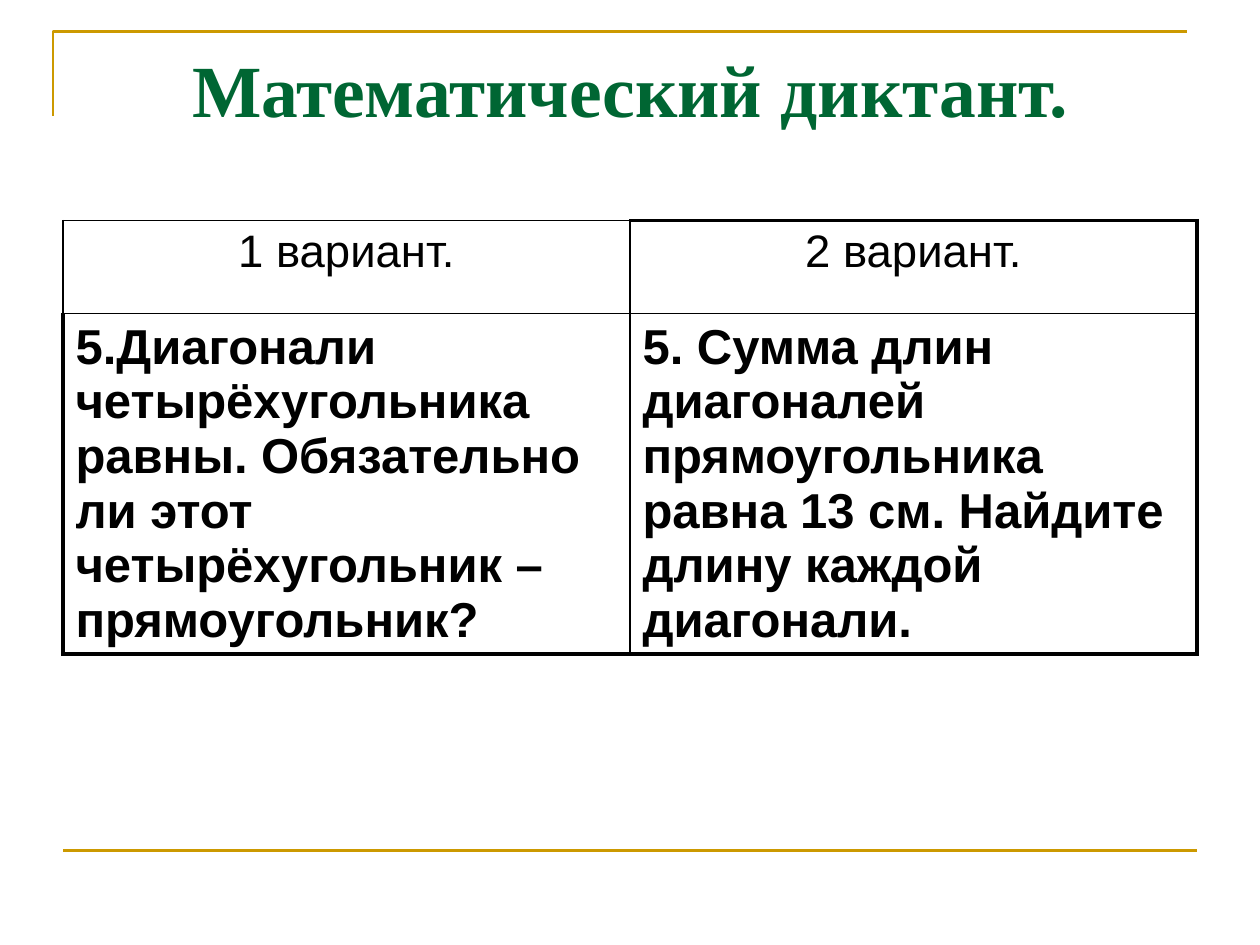
"""Build the "Математический диктант" slide with a two-variant question table."""
from lxml import etree
from pptx import Presentation, util as u
from pptx.dml.color import RGBColor
from pptx.enum import shapes, text
from pptx.oxml.ns import qn

COLORS = {"gold": "CC9900", "green": "006633", "black": "000000", "white": "FFFFFF"}
THIN, THICK = 1, 2.25
ROWS = [
    ["1 вариант.", "2 вариант."],
    ["5.Диагонали четырёхугольника равны. Обязательно ли этот четырёхугольник – прямоугольник?",
     "5. Сумма длин диагоналей прямоугольника равна 13 см. Найдите длину каждой диагонали."],
]
BORDERS = [
    [(THIN, THIN, THIN, THIN), (THIN, THICK, THICK, THIN)],
    [(THICK, THIN, THIN, THICK), (THIN, THIN, THICK, THICK)],
]


def style_font(font, name, size, color, bold):
    font.name, font.size, font.bold = name, u.Pt(size), bold
    font.color.rgb = RGBColor.from_string(COLORS[color])


def set_borders(cell, widths):
    properties = cell._tc.get_or_add_tcPr()
    for index, (side, width) in enumerate(zip("LTRB", widths)):
        border = etree.Element(qn(f"a:ln{side}"), w=str(u.Pt(width)))
        fill = etree.SubElement(border, qn("a:solidFill"))
        etree.SubElement(fill, qn("a:srgbClr"), val=COLORS["black"])
        properties.insert(index, border)


deck = Presentation()
deck.slide_width, deck.slide_height = u.Inches(10), u.Inches(7.5)
page = deck.slides.add_slide(deck.slide_layouts[5])

builder = page.shapes.build_freeform(u.Inches(0.42), u.Inches(0.92))
builder.add_line_segments(
    [(u.Inches(0.42), u.Inches(0.25)), (u.Inches(9.42), u.Inches(0.25))], close=False)
corner = builder.convert_to_shape()
corner.shadow.inherit = False
corner.fill.background()

rule = page.shapes.add_connector(
    shapes.MSO_CONNECTOR.STRAIGHT, u.Inches(0.5), u.Inches(6.75), u.Inches(9.5), u.Inches(6.75))
etree.SubElement(rule._element.spPr, qn("a:effectLst"))

for ornament in (corner, rule):
    ornament.line.color.rgb = RGBColor.from_string(COLORS["gold"])
    ornament.line.width = u.Pt(1.5)
etree_effects = rule._element.spPr.find(qn("a:effectLst"))
rule._element.spPr.append(etree_effects)

title = page.shapes.title
title.left, title.top = u.Inches(0.5), u.Inches(0.3)
title.width, title.height = u.Inches(9), u.Inches(1.25)
title.text_frame.text = "Математический диктант."
title.text_frame.auto_size = text.MSO_AUTO_SIZE.NONE
title.text_frame.vertical_anchor = text.MSO_ANCHOR.TOP
para = title.text_frame.paragraphs[0]
para.alignment = text.PP_ALIGN.CENTER
style_font(para.font, "Times New Roman", 42, "green", True)

table = page.shapes.add_table(
    2, 2, u.Inches(0.5), u.Inches(1.75), u.Inches(9), u.Inches(3.22)).table
table.first_row = table.horz_banding = False
for row, height in zip(table.rows, (0.74, 2.48)):
    row.height = u.Inches(height)
for row_index, wordings in enumerate(ROWS):
    header = row_index == 0
    for column_index, wording in enumerate(wordings):
        cell = table.cell(row_index, column_index)
        cell.text = wording
        cell.fill.solid()
        cell.fill.fore_color.rgb = RGBColor.from_string(COLORS["white"])
        set_borders(cell, BORDERS[row_index][column_index])
        para = cell.text_frame.paragraphs[0]
        para.alignment = text.PP_ALIGN.CENTER if header else text.PP_ALIGN.LEFT
        style_font(para.font, "Arial", 26 if header else 28, "black", not header)

deck.save("out.pptx")
